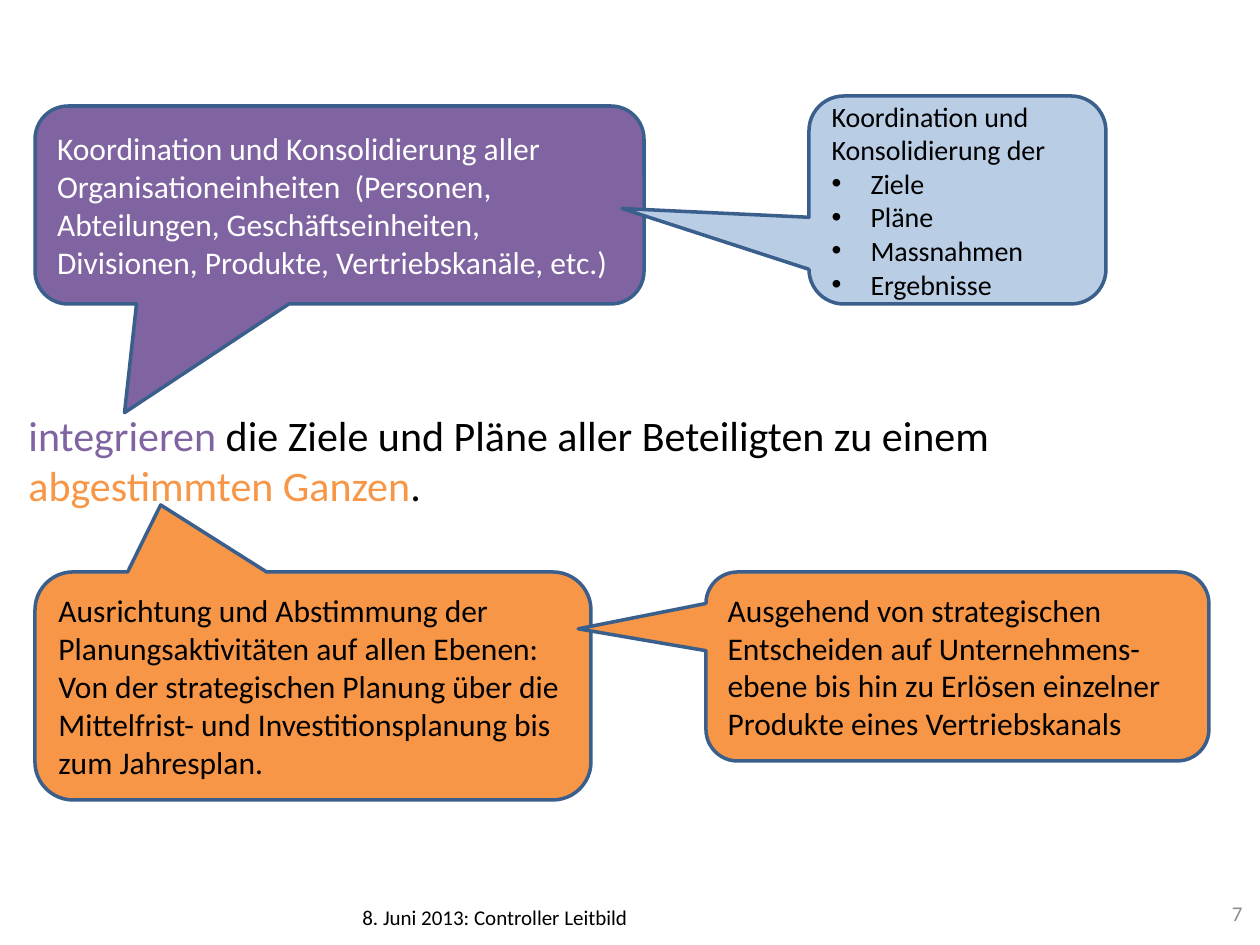
from lxml import etree
from pptx import Presentation
from pptx import util as u
from pptx.dml.color import RGBColor
from pptx.enum import shapes, text
from pptx.oxml import ns

SCALE = u.Inches(1) / 126
BLACK, WHITE, GREY = "000000", "FFFFFF", "8C8C8C"
PURPLE, ORANGE, BLUE, OUTLINE = "8064A2", "F79646", "B9CDE5", "3A5F8C"


def px(*lengths):
    return [u.Emu(round(length * SCALE)) for length in lengths]


def rgb(value):
    return RGBColor.from_string(value)


presentation = Presentation()
presentation.slide_width, presentation.slide_height = px(1260, 945)
slide = presentation.slides.add_slide(presentation.slide_layouts[6])

callouts = [
    {"box": (35, 106, 609, 198), "tip": (-0.353, 1.049), "fill": PURPLE, "color": WHITE, "size": 18,
     "lines": ["Koordination und Konsolidierung aller Organisationeinheiten  (Personen, "
               "Abteilungen, Geschäftseinheiten, Divisionen, Produkte, Vertriebskanäle, etc.)"],
     "bullets": []},
    {"box": (809, 96, 297, 208), "tip": (-1.13, 0.041), "fill": BLUE, "color": BLACK, "size": 16,
     "lines": ["Koordination und Konsolidierung der"],
     "bullets": ["Ziele", "Pläne", "Massnahmen", "Ergebnisse"]},
    {"box": (35, 572, 556, 228), "tip": (-0.274, -0.794), "fill": ORANGE, "color": BLACK, "size": 18,
     "lines": ["Ausrichtung und Abstimmung der Planungsaktivitäten auf allen Ebenen: "
               "Von der strategischen Planung über die Mittelfrist- und Investitionsplanung "
               "bis zum Jahresplan."],
     "bullets": []},
    {"box": (706, 572, 503, 189), "tip": (-0.754, -0.199), "fill": ORANGE, "color": BLACK, "size": 18,
     "lines": ["Ausgehend von strategischen Entscheiden auf Unternehmens-",
               "ebene bis hin zu Erlösen einzelner Produkte eines Vertriebskanals"],
     "bullets": []},
]

for callout in callouts:
    shape = slide.shapes.add_shape(shapes.MSO_SHAPE.ROUNDED_RECTANGULAR_CALLOUT, *px(*callout["box"]))
    shape.shadow.inherit = False
    for index, value in enumerate((*callout["tip"], 0.167)):
        shape.adjustments[index] = value
    shape.fill.solid()
    shape.fill.fore_color.rgb = rgb(callout["fill"])
    shape.line.color.rgb = rgb(OUTLINE)
    shape.line.width = u.Pt(2)
    frame = shape.text_frame
    frame.word_wrap = True
    frame.vertical_anchor = text.MSO_ANCHOR.MIDDLE
    for index, line in enumerate(callout["lines"] + callout["bullets"]):
        paragraph = frame.add_paragraph() if index else frame.paragraphs[0]
        paragraph.text = line
        paragraph.alignment = text.PP_ALIGN.LEFT
        if index >= len(callout["lines"]):
            properties = paragraph._p.get_or_add_pPr()
            indent = px(39)[0]
            properties.set("marL", str(indent))
            properties.set("indent", str(-indent))
            etree.SubElement(properties, ns.qn("a:buFont"), typeface="Arial")
            etree.SubElement(properties, ns.qn("a:buChar"), char="•")
        font = paragraph.runs[0].font
        for name, value in {"name": "Calibri", "size": u.Pt(callout["size"])}.items():
            setattr(font, name, value)
        font.color.rgb = rgb(callout["color"])

top, middle = text.MSO_ANCHOR.TOP, text.MSO_ANCHOR.MIDDLE
left, right = text.PP_ALIGN.LEFT, text.PP_ALIGN.RIGHT
labels = [
    ((350, 898, 656, 50), top, left, 12, 0, [("8. Juni 2013: Controller Leitbild", BLACK)]),
    ((16, 403, 1230, 115), top, left, 24, 6,
     [("integrieren", PURPLE), (" die Ziele und Pläne aller Beteiligten zu einem ", BLACK),
      ("abgestimmten Ganzen", ORANGE), (".", BLACK)]),
    ((1174, 888, 81, 50), middle, right, 12, 0, [("7", GREY)]),
]

for box, anchor, alignment, size, space_after, runs in labels:
    frame = slide.shapes.add_textbox(*px(*box)).text_frame
    frame.word_wrap = True
    frame.vertical_anchor = anchor
    paragraph = frame.paragraphs[0]
    paragraph.alignment = alignment
    paragraph.space_after = u.Pt(space_after)
    for words, color in runs:
        run = paragraph.add_run()
        run.text = words
        for name, value in {"name": "Calibri", "size": u.Pt(size)}.items():
            setattr(run.font, name, value)
        run.font.color.rgb = rgb(color)

presentation.save("out.pptx")
